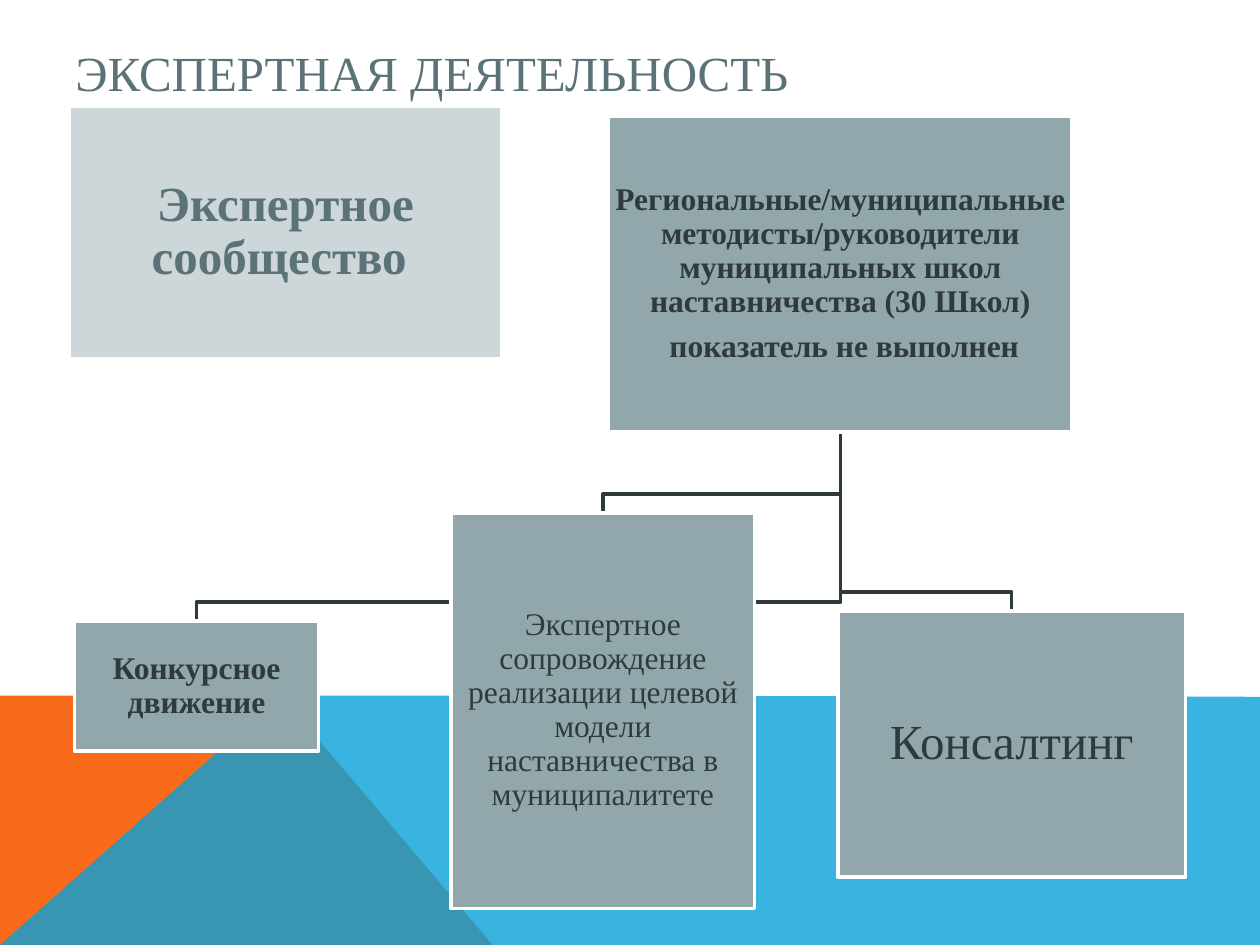
from lxml.etree import SubElement
from pptx import Presentation
from pptx.dml.color import RGBColor
from pptx.enum.text import MSO_ANCHOR, PP_ALIGN
from pptx.oxml.ns import qn
from pptx.util import Inches, Pt

FONT = "Times New Roman"
COLORS = {
    "orange": "F96A1B",
    "blue": "08A1D9",
    "slate": "5B7378",
    "dark": "2E3A3C",
    "box": "91A7AB",
    "pale": "CDD7D9",
    "white": "FFFFFF",
}

# Content: text, position (left, top, width, height), size, bold
TITLE = "ЭКСПЕРТНАЯ ДЕЯТЕЛЬНОСТЬ"
PARENT = {
    "text": "Региональные/муниципальные методисты/руководители муниципальных школ "
            "наставничества (30 Школ)\n показатель не выполнен",
    "at": (4.83, 0.92, 3.68, 2.51), "size": 18, "bold": True,
}
CHILDREN = [
    {"text": "Конкурсное движение",
     "at": (0.59, 4.93, 1.94, 1.03), "size": 18, "bold": True},
    {"text": "Экспертное сопровождение реализации целевой модели "
             "наставничества в муниципалитете",
     "at": (3.58, 4.07, 2.41, 3.14), "size": 18, "bold": False},
    {"text": "Консалтинг",
     "at": (6.65, 4.85, 2.76, 2.11), "size": 28, "bold": False},
]
COMMUNITY = {
    "text": "Экспертное сообщество ",
    "at": (0.55, 0.84, 3.43, 2.01), "size": 28, "bold": True,
    "fill": "pale", "color": "slate",
}
ORANGE_BAND = [(0, 7.5), (0, 5.52), (2.23, 5.52), (3.91, 7.5)]
BLUE_BAND = [(0, 7.5), (2.23, 5.52), (10, 5.53), (10, 7.5)]
ELBOW_DROP = 0.15  # height of the last leg above each child

presentation = Presentation()
presentation.slide_width, presentation.slide_height = Inches(10), Inches(7.5)
slide = presentation.slides.add_slide(presentation.slide_layouts[6])


def rgb(name):
    return RGBColor.from_string(COLORS[name])


def add_outline(points, close):
    start, *rest = [(Inches(x), Inches(y)) for x, y in points]
    builder = slide.shapes.build_freeform(*start)
    builder.add_line_segments(rest, close=close)
    shape = builder.convert_to_shape()
    shape.shadow.inherit = False
    return shape


def add_band(points, color):
    shape = add_outline(points, close=True)
    shape.fill.solid()
    shape.fill.fore_color.rgb = rgb(color)
    shape.line.fill.background()
    return shape


def add_branch(parent, child):
    left, top, width, height = parent["at"]
    start_x, start_y = left + width / 2, top + height
    left, top, width, _ = child["at"]
    end_x, turn_y = left + width / 2, top - ELBOW_DROP
    shape = add_outline([(start_x, start_y), (start_x, turn_y),
                         (end_x, turn_y), (end_x, top)], close=False)
    shape.fill.background()
    shape.line.color.rgb = rgb("dark")
    shape.line.width = Pt(2)


def format_text(paragraph, size, color, bold=False):
    for run in paragraph.runs:
        run.font.name = FONT
        run.font.size = Pt(size)
        run.font.bold = bold
        run.font.color.rgb = rgb(color)


def add_box(box):
    shape = slide.shapes.add_shape(1, *map(Inches, box["at"]))
    shape.shadow.inherit = False
    shape.fill.solid()
    shape.fill.fore_color.rgb = rgb(box.get("fill", "box"))
    shape.line.color.rgb = rgb("white")
    shape.line.width = Pt(2)
    frame = shape.text_frame
    frame.word_wrap = True
    frame.vertical_anchor = MSO_ANCHOR.MIDDLE
    inset = Inches(0.02 if box["size"] > 18 else 0.01)
    frame.margin_left = frame.margin_right = inset
    frame.margin_top = frame.margin_bottom = inset
    frame.text = box["text"]
    for paragraph in frame.paragraphs:
        paragraph.alignment = PP_ALIGN.CENTER
        paragraph.line_spacing = 0.9
        paragraph.space_after = Pt(round(box["size"] * 0.35, 1))
        format_text(paragraph, box["size"], box.get("color", "dark"), box["bold"])


# Background bands, the blue one see-through
add_band(ORANGE_BAND, "orange")
blue_band = add_band(BLUE_BAND, "blue")
blue_fill = blue_band.fill._xPr.find(qn("a:solidFill"))
SubElement(blue_fill[0], qn("a:alpha"), val="80000")

# Title
title = slide.shapes.add_textbox(Inches(0.5), Inches(0.3), Inches(9), Inches(0.54))
title.text_frame.word_wrap = True
title.text_frame.vertical_anchor = MSO_ANCHOR.MIDDLE
title.text_frame.text = TITLE
format_text(title.text_frame.paragraphs[0], 28, "slate")

# Hierarchy: branches behind, boxes in front
for child in reversed(CHILDREN):
    add_branch(PARENT, child)
for box in [PARENT, *CHILDREN, COMMUNITY]:
    add_box(box)

presentation.save("out.pptx")
